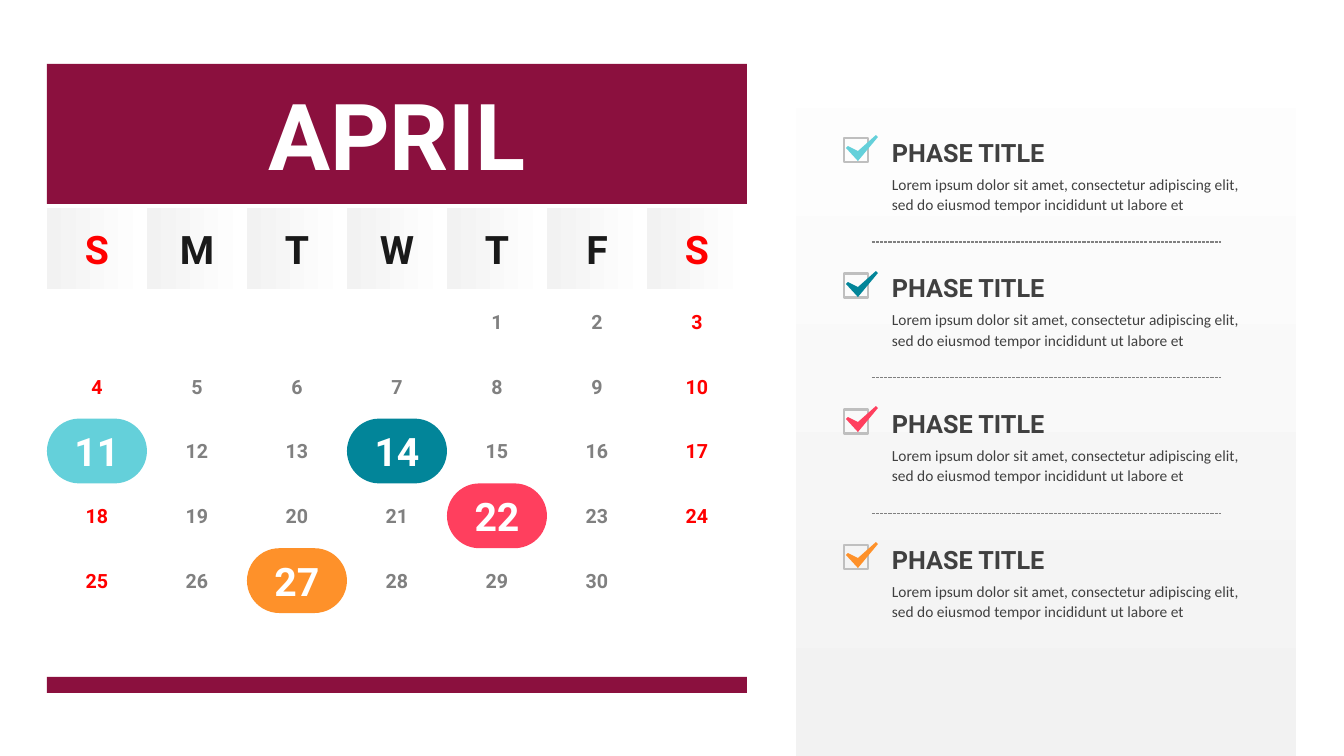
import pptx
import pptx.dml.color
import pptx.enum.dml
import pptx.enum.shapes
import pptx.enum.text
import pptx.oxml
import pptx.oxml.ns
import pptx.util

MONTH = "APRIL"
WEEKDAYS = ["S", "M", "T", "W", "T", "F", "S"]
FIRST_COLUMN, DAY_COUNT = 4, 30
WEEKEND = (0, 6)
MARKED_DAYS = {11: "aqua", 14: "teal", 22: "pink", 27: "orange"}
PHASE_TEXT = ("Lorem ipsum dolor sit amet, consectetur adipiscing elit, "
              "sed do eiusmod tempor incididunt ut labore et")
PHASES = [("PHASE TITLE", PHASE_TEXT, color) for color in MARKED_DAYS.values()]

COLORS = {
    "aqua": "64D0DA", "teal": "028599", "pink": "FF3F5E", "orange": "FE912A",
    "wine": "8B103E", "red": "FF0000", "white": "FFFFFF", "pale": "F2F2F2",
    "black": "1A1A1A", "day": "808080", "text": "404040", "box": "BFBFBF",
}
HEADING_FONT, BODY_FONT = "Roboto", "Calibri"

# Lengths in px
SCALE = 914400 / 100.8
SLIDE_WIDTH, SLIDE_HEIGHT = 1344, 756
CALENDAR_LEFT, CALENDAR_WIDTH = 47, 700
TITLE_TOP, TITLE_HEIGHT = 64, 140
WEEKDAY_TOP, WEEKDAY_HEIGHT = 208, 81
DAYS_TOP, DAYS_HEIGHT, WEEKS = 289, 324, 5
FOOTER_TOP, FOOTER_HEIGHT = 677, 16
PANEL_LEFT, PANEL_WIDTH = 796, 500
PHASE_LEFT, PHASE_TOP, PHASE_SPAN = 844, 138, 407
CHECK_SIZE = 24
CHECK_OUTLINE = [(32, -3), (34, -1), (14, 23), (2, 10), (4, 8), (14, 13)]
PHASE_TEXT_BOX = (48, -4, 357, 81)
DIVIDER_LEFT, DIVIDER_RIGHT, DIVIDER_DROP = 872, 1221, 104

RECTANGLE = pptx.enum.shapes.MSO_SHAPE.RECTANGLE
PILL = pptx.enum.shapes.MSO_SHAPE.ROUNDED_RECTANGLE


def emu(*lengths):
    return [round(length * SCALE) for length in lengths]


def rgb(name):
    return pptx.dml.color.RGBColor.from_string(COLORS[name])


def add_box(slide, kind, box, fill=None):
    shape = slide.shapes.add_shape(kind, *emu(*box))
    shape.shadow.inherit = False
    shape.line.fill.background()
    if fill:
        shape.fill.solid()
        shape.fill.fore_color.rgb = rgb(fill)
    else:
        shape.fill.background()
    return shape


def add_gradient_box(slide, box, angle):
    shape = add_box(slide, RECTANGLE, box)
    shape.fill.gradient()
    shape.fill.gradient_angle = angle
    for stop, color in zip(shape.fill.gradient_stops, ("pale", "white")):
        stop.color.rgb = rgb(color)
    return shape


def clear_frame(shape):
    frame = shape.text_frame
    frame.word_wrap = True
    frame.margin_left = frame.margin_right = 0
    frame.margin_top = frame.margin_bottom = 0
    return frame


def add_run(paragraph, text, size, color, font=HEADING_FONT, bold=True):
    run = paragraph.add_run()
    run.text = text
    run.font.name = font
    run.font.size = pptx.util.Pt(size)
    run.font.bold = bold
    run.font.color.rgb = rgb(color)


def write_centered(shape, text, size, color):
    frame = clear_frame(shape)
    frame.vertical_anchor = pptx.enum.text.MSO_ANCHOR.MIDDLE
    paragraph = frame.paragraphs[0]
    paragraph.alignment = pptx.enum.text.PP_ALIGN.CENTER
    add_run(paragraph, text, size, color)


def add_calendar(slide):
    column_width = CALENDAR_WIDTH / len(WEEKDAYS)
    row_height = DAYS_HEIGHT / WEEKS

    for column, letter in enumerate(WEEKDAYS):
        left = CALENDAR_LEFT + column * column_width
        header = add_gradient_box(
            slide, (left, WEEKDAY_TOP, column_width, WEEKDAY_HEIGHT), 0)
        write_centered(header, letter, 28, "red" if column in WEEKEND else "black")

    title = add_box(slide, RECTANGLE,
                    (CALENDAR_LEFT, TITLE_TOP, CALENDAR_WIDTH, TITLE_HEIGHT), "wine")
    write_centered(title, MONTH, 66, "white")

    for day in range(1, DAY_COUNT + 1):
        week, column = divmod(FIRST_COLUMN + day - 1, len(WEEKDAYS))
        box = (CALENDAR_LEFT + column * column_width, DAYS_TOP + week * row_height,
               column_width, row_height)
        if day in MARKED_DAYS:
            pill = add_box(slide, PILL, box, MARKED_DAYS[day])
            pill.adjustments[0] = 0.5
            write_centered(pill, str(day), 28, "white")
        else:
            cell = slide.shapes.add_textbox(*emu(*box))
            write_centered(cell, str(day), 14, "red" if column in WEEKEND else "day")

    add_box(slide, RECTANGLE,
            (CALENDAR_LEFT, FOOTER_TOP, CALENDAR_WIDTH, FOOTER_HEIGHT), "wine")


def add_check(slide, top, color):
    box = add_box(slide, RECTANGLE, (PHASE_LEFT, top, CHECK_SIZE, CHECK_SIZE))
    box.line.color.rgb = rgb("box")
    box.line.width = pptx.util.Pt(2)
    points = [(PHASE_LEFT + x, top + y) for x, y in CHECK_OUTLINE]
    builder = slide.shapes.build_freeform(*points[0], scale=SCALE)
    builder.add_line_segments(points[1:], close=True)
    tick = builder.convert_to_shape()
    tick.shadow.inherit = False
    tick.fill.solid()
    tick.fill.fore_color.rgb = rgb(color)
    tick.line.fill.background()


def add_phase_text(slide, top, title, body):
    x, y, width, height = PHASE_TEXT_BOX
    textbox = slide.shapes.add_textbox(*emu(PHASE_LEFT + x, top + y, width, height))
    frame = clear_frame(textbox)
    frame.auto_size = pptx.enum.text.MSO_AUTO_SIZE.SHAPE_TO_FIT_TEXT
    add_run(frame.paragraphs[0], title, 18, "text")
    add_run(frame.add_paragraph(), body, 11, "text", BODY_FONT, False)
    for paragraph in frame.paragraphs:
        paragraph.line_spacing = 1.1
        paragraph.space_before = pptx.util.Pt(4)


def add_divider(slide, y):
    divider = slide.shapes.add_connector(
        pptx.enum.shapes.MSO_CONNECTOR.STRAIGHT,
        *emu(DIVIDER_LEFT, y, DIVIDER_RIGHT, y))
    divider.line.color.rgb = rgb("day")
    divider.line.width = pptx.util.Pt(0.75)
    divider.line.dash_style = pptx.enum.dml.MSO_LINE.SQUARE_DOT
    properties = divider._element.spPr
    properties.append(pptx.oxml.parse_xml(
        f"<a:effectLst {pptx.oxml.ns.nsdecls('a')}/>"))


def add_phases(slide):
    add_gradient_box(slide, (PANEL_LEFT, 0, PANEL_WIDTH, SLIDE_HEIGHT), 90)
    pitch = PHASE_SPAN / (len(PHASES) - 1)
    for index, (title, body, color) in enumerate(PHASES):
        top = PHASE_TOP + index * pitch
        add_check(slide, top, color)
        add_phase_text(slide, top, title, body)
        if index < len(PHASES) - 1:
            add_divider(slide, top + DIVIDER_DROP)


def main():
    presentation = pptx.Presentation()
    presentation.slide_width, presentation.slide_height = emu(SLIDE_WIDTH, SLIDE_HEIGHT)
    slide = presentation.slides.add_slide(presentation.slide_layouts[6])
    add_calendar(slide)
    add_phases(slide)
    presentation.save("out.pptx")


if __name__ == "__main__":
    main()
